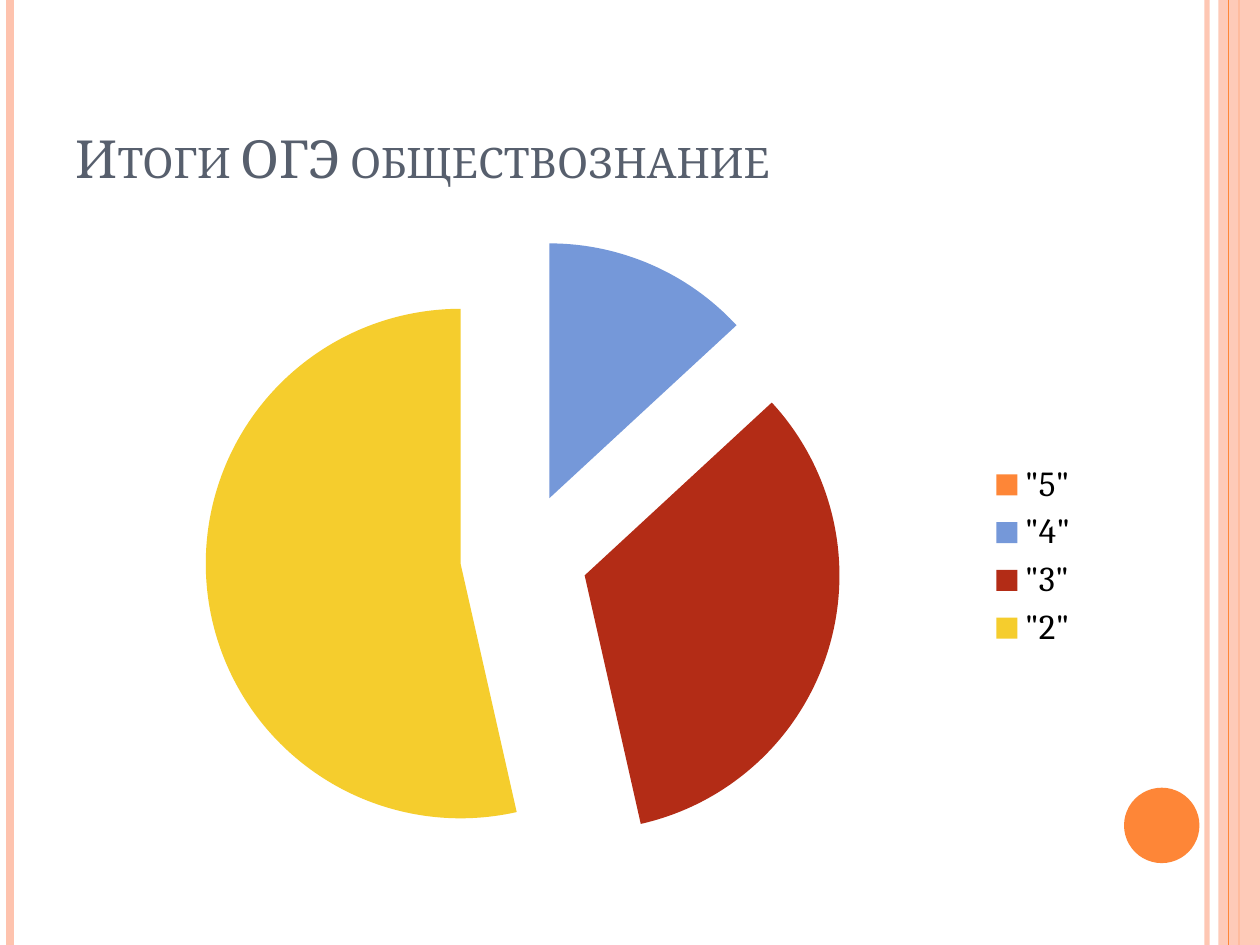
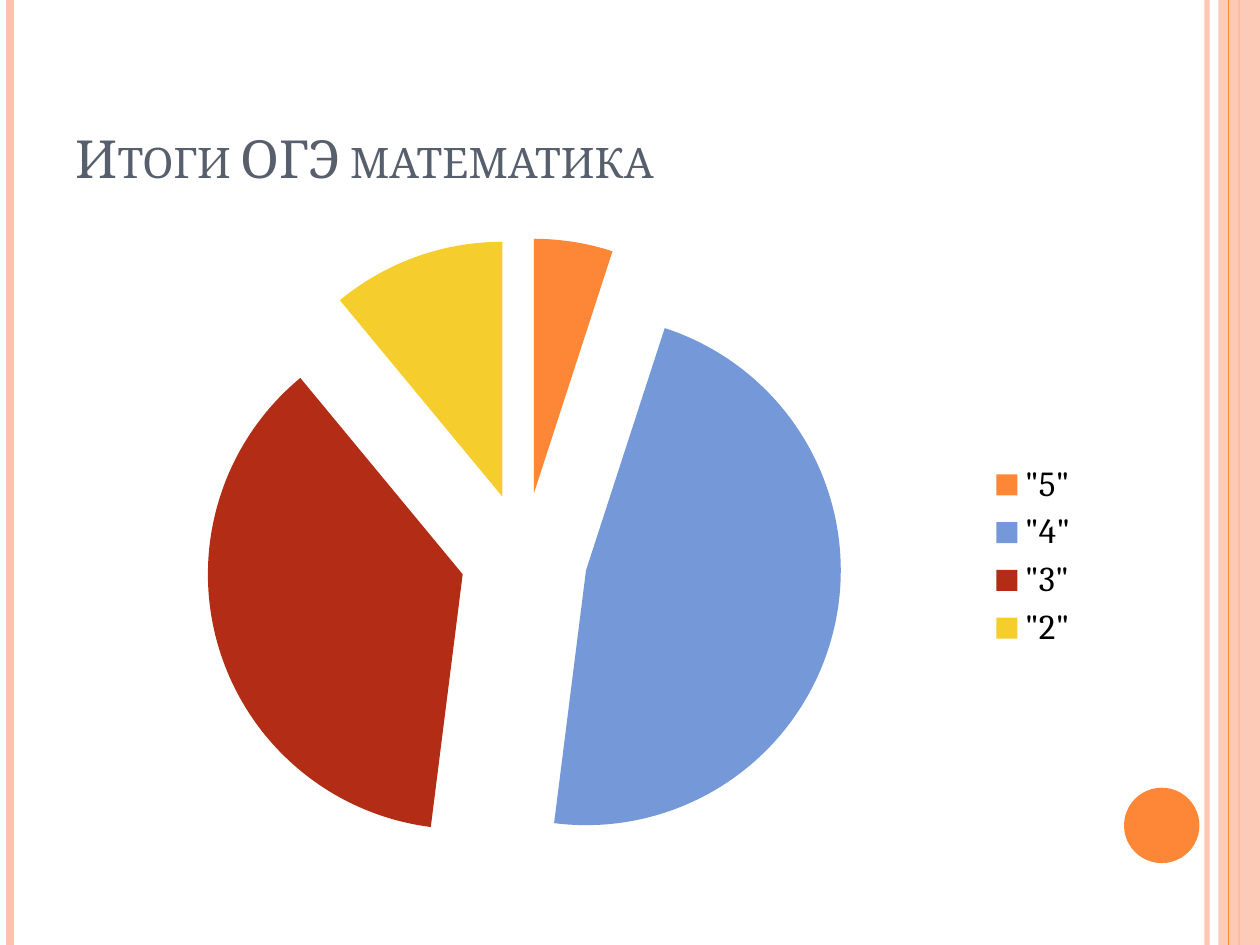
from lxml.etree import SubElement
from pptx import Presentation
from pptx.chart.data import CategoryChartData
from pptx.dml.color import RGBColor
from pptx.enum.chart import XL_CHART_TYPE, XL_LEGEND_POSITION
from pptx.enum.shapes import MSO_CONNECTOR, MSO_SHAPE
from pptx.enum.text import MSO_ANCHOR
from pptx.oxml import parse_xml
from pptx.oxml.ns import nsdecls, qn
from pptx.util import Cm, Pt

COLORS = {
    "orange": "FE8637",
    "peach": "FEC3AE",
    "blue": "7598D9",
    "red": "B32C16",
    "yellow": "F5CD2D",
    "slate": "575F6D",
    "black": "000000",
}
FONT = "Cambria"
SLIDE_WIDTH, SLIDE_HEIGHT = Cm(25.4), Cm(19.05)
CONTENT_LEFT, CONTENT_WIDTH = Cm(1.27), Cm(20.75)

TITLE_FONT = {"name": FONT, "size": Pt(30)}
CHART_FONT = {"name": FONT, "size": Pt(10)}
LEGEND_FONT = {"name": FONT, "size": Pt(20)}
TITLE_FRAME = {"word_wrap": True, "vertical_anchor": MSO_ANCHOR.BOTTOM}
LEGEND_FORMAT = {"position": XL_LEGEND_POSITION.RIGHT, "include_in_layout": False}

GRADE_COLORS = {'"5"': "orange", '"4"': "blue", '"3"': "red", '"2"': "yellow"}
EXPLOSION = 25
EXAM_RESULTS = {
    "Итоги ОГЭ обществознание": (0, 13, 33, 53),
    "Итоги ОГЭ математика": (5, 47, 37, 11),
}


def rgb(color):
    return RGBColor.from_string(COLORS[color])


def apply_format(target, values):
    for attribute, value in values.items():
        setattr(target, attribute, value)


def style_font(font, values, color):
    apply_format(font, values)
    font.color.rgb = rgb(color)


def set_opacity(element, percent):
    color_node = next(element.iter(qn("a:srgbClr")))
    SubElement(color_node, qn("a:alpha")).set("val", str(percent * 1000))


def add_stripe(slide, x, color, width, opacity=100):
    stripe = slide.shapes.add_connector(
        MSO_CONNECTOR.STRAIGHT, Cm(x), 0, Cm(x), SLIDE_HEIGHT)
    stripe.line.color.rgb = rgb(color)
    stripe.line.width = Pt(width)
    properties = stripe._element.spPr
    SubElement(properties, qn("a:effectLst"))
    if opacity < 100:
        set_opacity(properties, opacity)


def add_solid(slide, kind, left, top, width, height, color, opacity=100):
    solid = slide.shapes.add_shape(kind, left, top, width, height)
    solid.shadow.inherit = False
    solid.fill.solid()
    solid.fill.fore_color.rgb = rgb(color)
    solid.line.fill.background()
    if opacity < 100:
        set_opacity(solid._element.spPr, opacity)


def add_frame(slide):
    add_stripe(slide, 24.33, "peach", 3, 93)
    add_stripe(slide, 0.21, "peach", 4.5)
    add_stripe(slide, 24.98, "orange", 1.5)
    add_solid(slide, MSO_SHAPE.RECTANGLE, Cm(24.56), 0, Cm(0.84), SLIDE_HEIGHT,
              "peach", 87)
    add_stripe(slide, 24.77, "orange", 0.75)
    add_solid(slide, MSO_SHAPE.OVAL, Cm(22.66), Cm(15.88), Cm(1.52), Cm(1.52),
              "orange")


def add_title(slide, wording):
    title = slide.shapes.add_textbox(CONTENT_LEFT, Cm(0.76), CONTENT_WIDTH, Cm(3.18))
    apply_format(title.text_frame, TITLE_FRAME)
    run = title.text_frame.paragraphs[0].add_run()
    run.text = wording
    style_font(run.font, TITLE_FONT, "slate")
    run._r.get_or_add_rPr().set("cap", "small")


def add_grade_pie(slide, shares):
    grades = CategoryChartData()
    grades.categories = list(GRADE_COLORS)
    grades.add_series("Series 1", shares)
    pie = slide.shapes.add_chart(
        XL_CHART_TYPE.PIE, CONTENT_LEFT, Cm(4.45), CONTENT_WIDTH, Cm(13.54), grades).chart
    pie.has_title = False
    pie.has_legend = True
    style_font(pie.font, CHART_FONT, "black")
    apply_format(pie.legend, LEGEND_FORMAT)
    style_font(pie.legend.font, LEGEND_FONT, "black")

    pie.plots[0].vary_by_categories = True
    series = pie.plots[0].series[0]
    for index, color in enumerate(GRADE_COLORS.values()):
        slice_fill = series.points[index].format.fill
        slice_fill.solid()
        slice_fill.fore_color.rgb = rgb(color)
    explosion = parse_xml(f'<c:explosion {nsdecls("c")} val="{EXPLOSION}"/>')
    series._element.find(qn("c:tx")).addnext(explosion)


def main():
    presentation = Presentation()
    apply_format(presentation, {"slide_width": SLIDE_WIDTH, "slide_height": SLIDE_HEIGHT})
    for wording, shares in EXAM_RESULTS.items():
        slide = presentation.slides.add_slide(presentation.slide_layouts[6])
        add_frame(slide)
        add_title(slide, wording)
        add_grade_pie(slide, shares)
    presentation.save("out.pptx")


if __name__ == "__main__":
    main()
